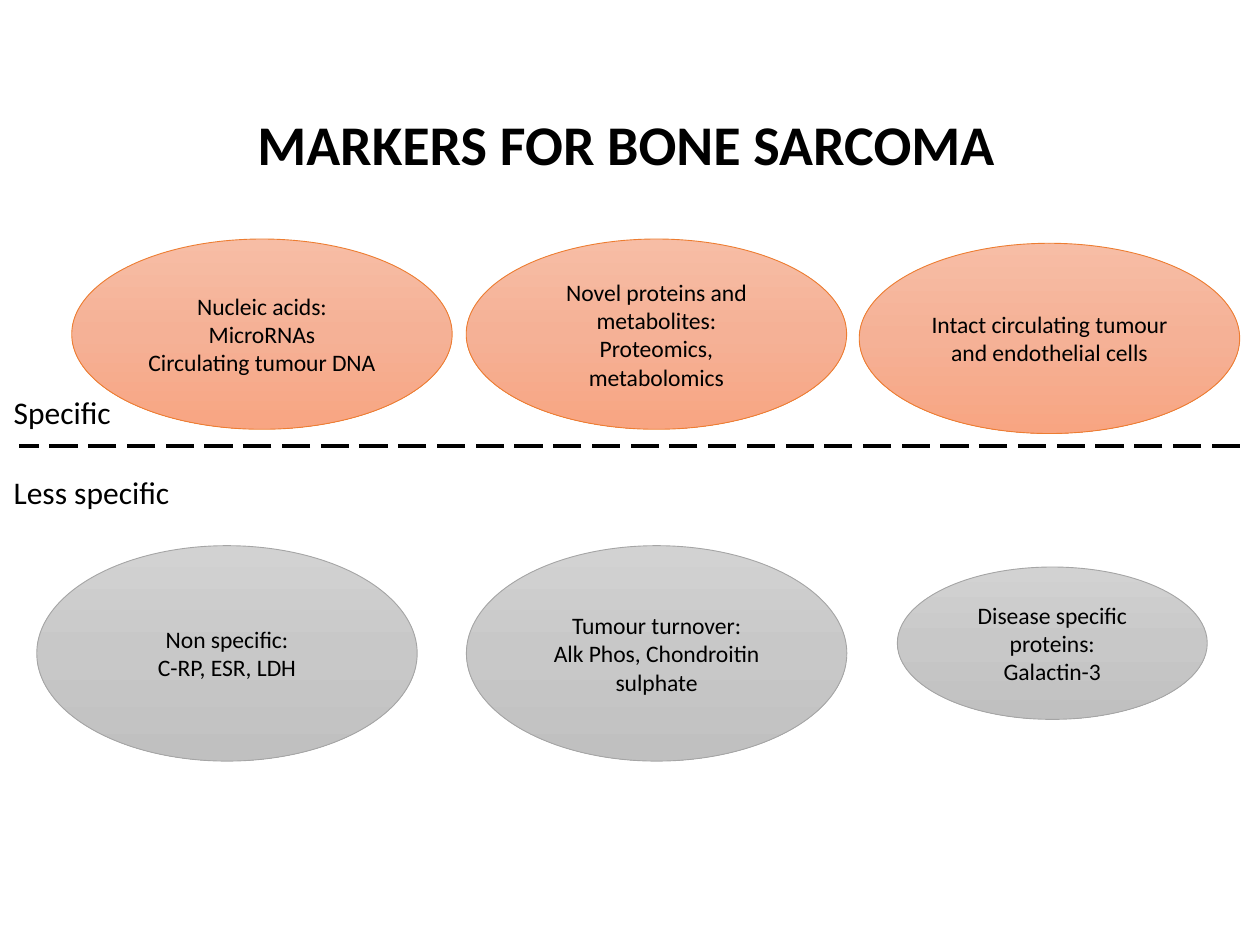
from copy import deepcopy

from pptx import Presentation
from pptx.dml.color import RGBColor
from pptx.enum import dml, shapes, text
from pptx.oxml.ns import qn
from pptx.oxml.xmlchemy import OxmlElement
from pptx.util import Pt

FONT = "Calibri"
BLACK = RGBColor(0x00, 0x00, 0x00)
ORANGE = RGBColor(0xED, 0x7D, 0x31)
GREY = RGBColor(0xA5, 0xA5, 0xA5)
ORANGE_STOPS = [RGBColor(0xF7, 0xBD, 0xA5), RGBColor(0xF5, 0xB1, 0x96), RGBColor(0xF8, 0xA5, 0x82)]
GREY_STOPS = [RGBColor(0xD2, 0xD2, 0xD2), RGBColor(0xC8, 0xC8, 0xC8), RGBColor(0xC0, 0xC0, 0xC0)]

# Each marker: left, top, width, height within its row, then its lines
SPECIFIC = [
    (0, 0, 217.4, 108.7, ["Nucleic acids:", "MicroRNAs", "Circulating tumour DNA"]),
    (225.4, 0, 217.4, 108.7, ["Novel proteins and metabolites:", "Proteomics, metabolomics"]),
    (450, 2.4, 217.4, 108.7, ["Intact circulating tumour and endothelial cells"]),
]
LESS_SPECIFIC = [
    (0, 0, 217.4, 123.1, ["Non specific:", "C-RP, ESR, LDH"]),
    (245.5, 0, 217.4, 123.1, ["Tumour turnover:", "Alk Phos, Chondroitin sulphate"]),
    (491.8, 12.2, 177.1, 87.1, ["Disease specific proteins:", "Galactin-3"]),
]


def add_run(p, words, size, bold=False):
    r = p.add_run()
    r.text = words
    r.font.name, r.font.size, r.font.bold = FONT, Pt(size), bold
    r.font.color.rgb = BLACK


def fill_gradient(sp, colours):
    sp.fill.gradient()
    sp.fill.gradient_angle = 270  # top to bottom
    stop_list = sp._element.spPr.find(".//" + qn("a:gsLst"))
    stop_list.insert(1, deepcopy(stop_list[0]))
    for i, (stop, colour) in enumerate(zip(sp.fill.gradient_stops, colours)):
        stop.color.rgb = colour
        stop.position = i / (len(colours) - 1)


def add_marker_row(s, x, y, markers, colours, outline):
    for left, top, w, h, lines in markers:
        sp = s.shapes.add_shape(shapes.MSO_SHAPE.OVAL, Pt(x + left), Pt(y + top), Pt(w), Pt(h))
        sp.shadow.inherit = False
        fill_gradient(sp, colours)
        sp.line.color.rgb = outline
        sp.line.width = Pt(0.5)
        tf = sp.text_frame
        tf.word_wrap = True
        tf.vertical_anchor = text.MSO_ANCHOR.MIDDLE
        for i, line in enumerate(lines):
            p = tf.add_paragraph() if i else tf.paragraphs[0]
            p.alignment = text.PP_ALIGN.CENTER
            add_run(p, line, 13.5)


def add_label(s, x, y, w, h, words, size, bold=False):
    tf = s.shapes.add_textbox(Pt(x), Pt(y), Pt(w), Pt(h)).text_frame
    tf.word_wrap = False
    tf.auto_size = text.MSO_AUTO_SIZE.SHAPE_TO_FIT_TEXT
    add_run(tf.paragraphs[0], words, size, bold)


def add_divider(s, x, y, w):
    line = s.shapes.add_connector(shapes.MSO_CONNECTOR.STRAIGHT, Pt(x + w), Pt(y), Pt(x), Pt(y))
    line.line.color.rgb = BLACK
    line.line.width = Pt(2)
    line.line.dash_style = dml.MSO_LINE.LONG_DASH
    line._element.spPr.append(OxmlElement("a:effectLst"))


def main():
    prs = Presentation()
    prs.slide_width, prs.slide_height = Pt(720), Pt(540)
    s = prs.slides.add_slide(prs.slide_layouts[6])

    # Markers above and below the divider
    add_marker_row(s, 41, 136.6, SPECIFIC, ORANGE_STOPS, ORANGE)
    add_divider(s, 10.6, 255, 697.9)
    add_marker_row(s, 21, 311.8, LESS_SPECIFIC, GREY_STOPS, GREY)

    # Title and side labels
    add_label(s, 140, 59, 440, 46, "MARKERS FOR BONE SARCOMA", 32, bold=True)
    add_label(s, 0.7, 221, 70.6, 29, "Specific", 18)
    add_label(s, 0.7, 267, 104.4, 29, "Less specific", 18)

    prs.save("out.pptx")


if __name__ == "__main__":
    main()
